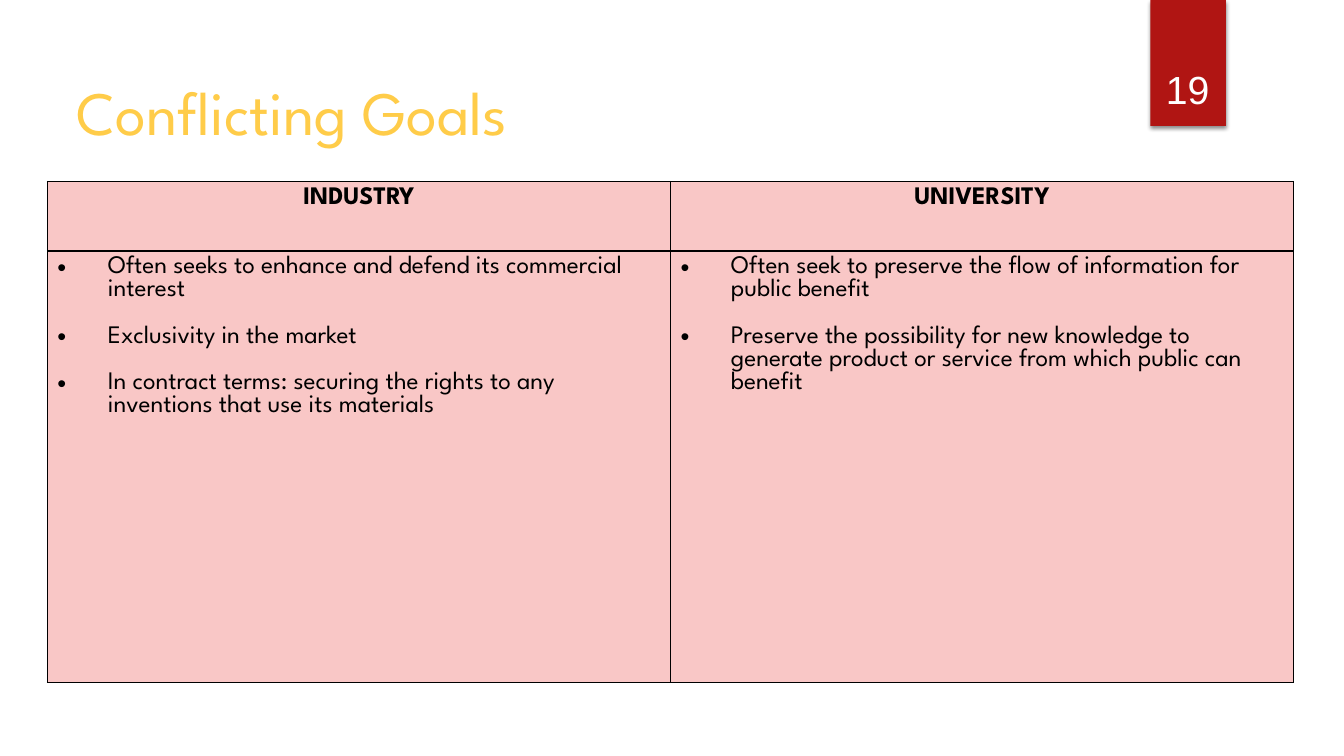
from lxml import etree
from pptx import Presentation
from pptx.dml.color import RGBColor
from pptx.enum.shapes import MSO_SHAPE as SHAPE
from pptx.enum.text import MSO_ANCHOR as ANCHOR, PP_ALIGN as ALIGN
from pptx.oxml import parse_xml
from pptx.oxml.ns import nsdecls, qn
from pptx.util import Inches, Pt

BLACK = RGBColor(0x00, 0x00, 0x00)
WHITE = RGBColor(0xFF, 0xFF, 0xFF)
RED = RGBColor(0xB0, 0x15, 0x13)
PINK = RGBColor(0xF9, 0xC7, 0xC6)
GOLD = RGBColor(0xFF, 0xCC, 0x49)
HEAD_FONT = "League Spartan"
NUMBER_FONT = "Arial"

GOALS = {
    "INDUSTRY": [
        "Often seeks to enhance and defend its commercial interest",
        "Exclusivity in the market",
        "In contract terms: securing the rights to any inventions that use its materials",
    ],
    "UNIVERSITY": [
        "Often seek to preserve the flow of information for public benefit",
        "Preserve the possibility for new knowledge to generate product or service "
        "from which public can benefit",
    ],
}


def write(p, text, color, **formats):
    """Put one formatted run into a paragraph."""
    r = p.add_run()
    r.text = text
    r.font.color.rgb = color
    for name, value in formats.items():
        setattr(r.font, name, value)


def add_text(slide, box, text, color, top_inset=0.05, anchor=ANCHOR.TOP, align=ALIGN.LEFT, **formats):
    """Add a one-paragraph text box."""
    tf = slide.shapes.add_textbox(*map(Inches, box)).text_frame
    settings = {"word_wrap": True, "vertical_anchor": anchor, "margin_top": Inches(top_inset)}
    settings.update({f"margin_{side}": Inches(0.05) for side in ("left", "right", "bottom")})
    for name, value in settings.items():
        setattr(tf, name, value)
    p = tf.paragraphs[0]
    p.alignment = align
    write(p, text, color, **formats)


def add_ribbon(slide, left, top, width, height):
    """Draw the shadowed page ribbon with its number."""
    sp = slide.shapes.add_shape(SHAPE.RECTANGLE, *map(Inches, (left, top, width, height)))
    sp.shadow.inherit = False
    sp.fill.solid()
    sp.fill.fore_color.rgb = RED
    sp.line.fill.background()
    effects = sp._element.spPr.find(qn("a:effectLst"))
    effects.append(parse_xml(
        f'<a:outerShdw {nsdecls("a")} blurRad="{Pt(3)}" dist="{Pt(2)}" dir="5400000" rotWithShape="0">'
        '<a:srgbClr val="000000"><a:alpha val="45000"/></a:srgbClr></a:outerShdw>'))
    add_text(slide, (left - 0.09, top + 0.59, width + 0.17, 0.57), "19", WHITE,
             anchor=ANCHOR.BOTTOM, align=ALIGN.CENTER, size=Pt(28), name=NUMBER_FONT)


def style_cell(cell):
    """Give a cell thin black borders and a pink fill."""
    tcPr = cell._tc.get_or_add_tcPr()
    for side in ("lnL", "lnR", "lnT", "lnB"):
        tcPr.append(parse_xml(
            f'<a:{side} {nsdecls("a")} w="{Pt(1)}"><a:solidFill><a:srgbClr val="{BLACK}"/>'
            f'</a:solidFill></a:{side}>'))
    cell.fill.solid()
    cell.fill.fore_color.rgb = PINK


def add_bullet(p):
    """Set a hanging round bullet on a paragraph."""
    pPr = p._p.get_or_add_pPr()
    pPr.set("marL", str(Inches(0.5)))
    pPr.set("indent", str(-Inches(0.5)))
    etree.SubElement(pPr, qn("a:buFont")).set("typeface", NUMBER_FONT)
    etree.SubElement(pPr, qn("a:buChar")).set("char", "•")


def add_goals_table(slide, left, top, width, row_heights):
    """Build the table with one column of goals per party."""
    box = map(Inches, (left, top, width, sum(row_heights)))
    table = slide.shapes.add_table(len(row_heights), len(GOALS), *box).table
    for row, height in zip(table.rows, row_heights):
        row.height = Inches(height)
    formats = {"size": Pt(18), "name": HEAD_FONT}
    for col, (party, goals) in enumerate(GOALS.items()):
        table.columns[col].width = Inches(width / len(GOALS))
        head, body = table.cell(0, col), table.cell(1, col)
        style_cell(head)
        style_cell(body)
        p = head.text_frame.paragraphs[0]
        p.alignment = ALIGN.CENTER
        write(p, party, BLACK, bold=True, **formats)
        tf = body.text_frame
        for i, goal in enumerate(goals):
            p = tf.add_paragraph() if i else tf.paragraphs[0]
            add_bullet(p)
            if i:
                p.space_before = Pt(16.5)
            write(p, goal, BLACK, bold=False, **formats)


def main():
    """Build and save the slide."""
    prs = Presentation()
    prs.slide_width, prs.slide_height = Inches(13.33), Inches(7.5)
    slide = prs.slides.add_slide(prs.slide_layouts[6])
    add_ribbon(slide, 11.41, 0, 0.75, 1.25)
    add_text(slide, (0.71, 0.5, 10.29, 1.76), "Conflicting Goals", GOLD,
             top_inset=0.23, size=Pt(44), name=HEAD_FONT)
    add_goals_table(slide, 0.47, 1.8, 12.36, (0.69, 4.28))
    prs.save("out.pptx")


if __name__ == "__main__":
    main()
